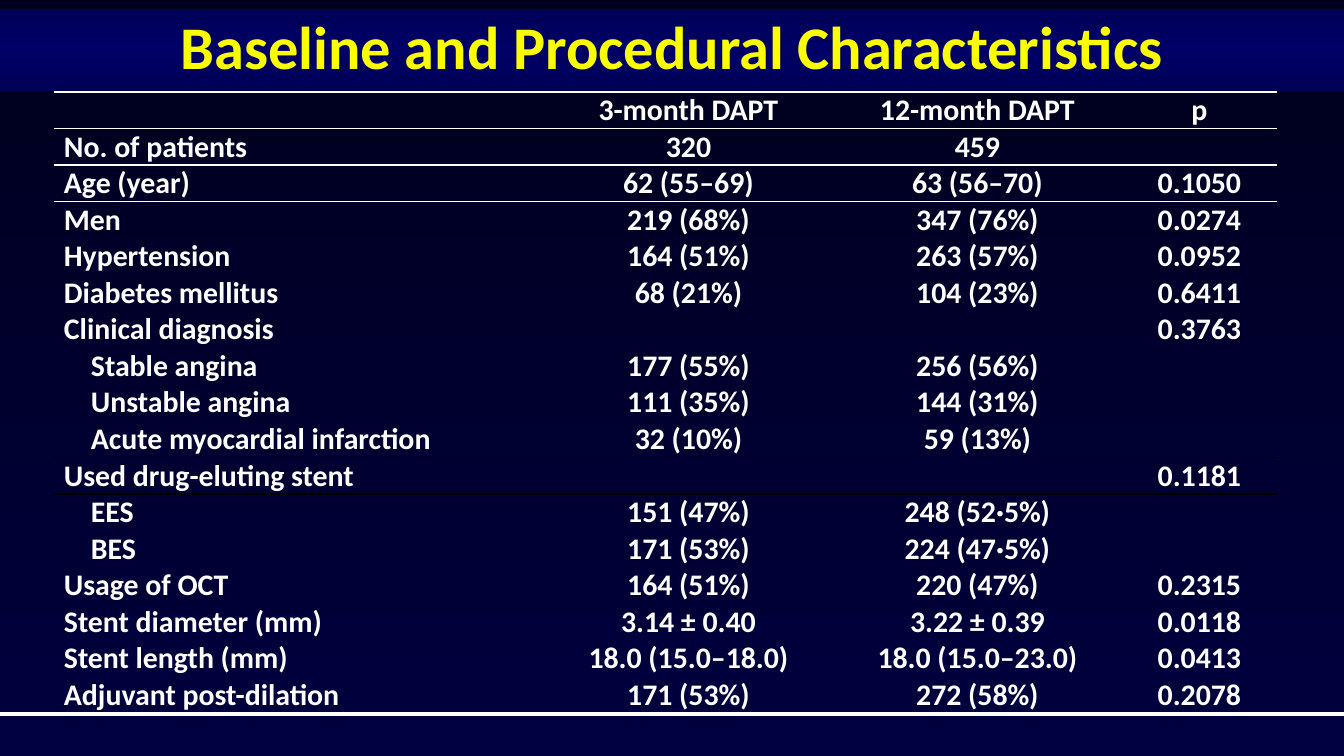
"""Build a slide with a table of baseline and procedural characteristics."""
from copy import deepcopy

from lxml import etree
from pptx import Presentation
from pptx import util as u
from pptx.dml.color import RGBColor
from pptx.enum import shapes, text
from pptx.oxml.ns import qn

PX = 914400 / 134.4
WHITE, BLACK, YELLOW = "FFFFFF", "000000", "FAFD00"
FONT = "Calibri"


def px(*lengths):
    return [u.Emu(round(length * PX)) for length in lengths]


def fill_gradient(fill, colors):
    fill.gradient()
    fill.gradient_angle = 270
    stop_list = fill.gradient_stops[0]._gs.getparent()
    while len(stop_list) < len(colors):
        stop_list.append(deepcopy(stop_list[0]))
    for index, color in enumerate(colors):
        stop = fill.gradient_stops[index]
        stop.position = index / (len(colors) - 1)
        stop.color.rgb = RGBColor.from_string(color)


presentation = Presentation()
presentation.slide_width, presentation.slide_height = px(1344, 756)
slide = presentation.slides.add_slide(presentation.slide_layouts[5])
fill_gradient(slide.background.fill, ["00001D", "00003E"])

title = slide.shapes.title
title.left, title.top, title.width, title.height = px(0, 9, 1344, 82)
fill_gradient(title.fill, ["000057", "000066", "000057"])
title.text_frame.auto_size = text.MSO_AUTO_SIZE.NONE
title.text_frame.vertical_anchor = text.MSO_ANCHOR.MIDDLE
paragraph = title.text_frame.paragraphs[0]
paragraph.alignment = text.PP_ALIGN.CENTER
paragraph.line_spacing = 0.9
run = paragraph.add_run()
run.text = "Baseline and Procedural Characteristics"
run.font.name, run.font.size, run.font.bold = FONT, u.Pt(32.4), True
run.font.color.rgb = RGBColor.from_string(YELLOW)

footer_line = slide.shapes.add_connector(
    shapes.MSO_CONNECTOR.STRAIGHT, *px(0, 714, 1344, 714))
footer_line.line.color.rgb = RGBColor.from_string(WHITE)
footer_line.line.width = u.Pt(1.75)
etree.SubElement(footer_line._element.spPr, qn("a:effectLst"))

rows = [
    ("", "3-month DAPT", "12-month DAPT", "p"),
    ("No. of patients", "320", "459", ""),
    ("Age (year)", "62 (55–69)", "63 (56–70)", "0.1050"),
    ("Men", "219 (68%)", "347 (76%)", "0.0274"),
    ("Hypertension", "164 (51%)", "263 (57%)", "0.0952"),
    ("Diabetes mellitus", "68 (21%)", "104 (23%)", "0.6411"),
    ("Clinical diagnosis", "", "", "0.3763"),
    ("Stable angina", "177 (55%)", "256 (56%)", ""),
    ("Unstable angina", "111 (35%)", "144 (31%)", ""),
    ("Acute myocardial infarction", "32 (10%)", "59 (13%)", ""),
    ("Used drug-eluting stent", "", "", "0.1181"),
    ("EES", "151 (47%)", "248 (52·5%)", ""),
    ("BES", "171 (53%)", "224 (47·5%)", ""),
    ("Usage of OCT", "164 (51%)", "220 (47%)", "0.2315"),
    ("Stent diameter (mm)", "3.14 ± 0.40", "3.22 ± 0.39", "0.0118"),
    ("Stent length (mm)", "18.0 (15.0–18.0)", "18.0 (15.0–23.0)", "0.0413"),
    ("Adjuvant post-dilation", "171 (53%)", "272 (58%)", "0.2078"),
]
subgroups = {"Stable angina", "Unstable angina", "Acute myocardial infarction", "EES", "BES"}
rules = {0: WHITE, 1: WHITE, 2: WHITE, 10: BLACK, len(rows): WHITE}
column_widths = [490, 289, 289, 155]

table = slide.shapes.add_table(
    len(rows), len(column_widths), *px(54, 92, sum(column_widths), 609)).table
table.first_row = table.horz_banding = False
style = table._tbl.tblPr.find(qn("a:tableStyleId"))
style.text = "{2D5ABB26-0587-4C30-8999-92F81FD0307C}"
for column, width in zip(table.columns, px(*column_widths)):
    column.width = width

for row_index, row in enumerate(rows):
    for column_index, value in enumerate(row):
        cell = table.cell(row_index, column_index)
        cell.margin_left = cell.margin_right = px(10)[0]
        cell.margin_top = cell.margin_bottom = 0
        properties = cell._tc.get_or_add_tcPr()
        for side, edge in (("a:lnT", row_index), ("a:lnB", row_index + 1)):
            if edge in rules:
                border = etree.SubElement(properties, qn(side), w=str(u.Pt(1)))
                solid = etree.SubElement(border, qn("a:solidFill"))
                etree.SubElement(solid, qn("a:srgbClr"), val=rules[edge])
        cell.fill.background()

        paragraph = cell.text_frame.paragraphs[0]
        if column_index:
            paragraph.alignment = text.PP_ALIGN.CENTER
        elif value in subgroups:
            paragraph._p.get_or_add_pPr().set("marL", str(px(27)[0]))
        if value:
            run = paragraph.add_run()
            run.text = value
            run.font.name, run.font.size, run.font.bold = FONT, u.Pt(16), True
            run.font.color.rgb = RGBColor.from_string(WHITE)
        else:
            etree.SubElement(paragraph._p, qn("a:endParaRPr"), sz="1600")

presentation.save("out.pptx")
